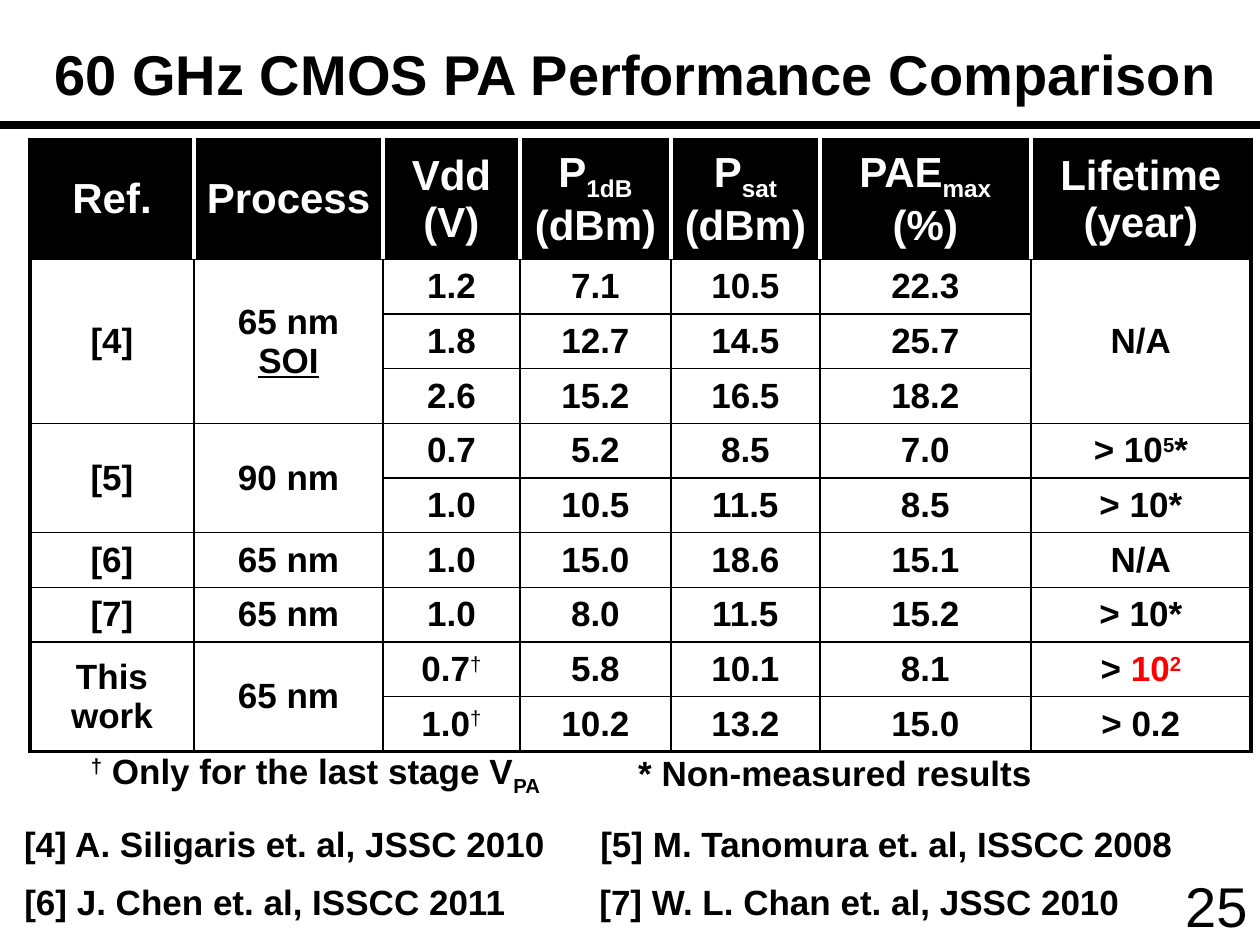
from lxml import etree
from pptx import Presentation
from pptx.dml.color import RGBColor
from pptx.enum.shapes import MSO_CONNECTOR
from pptx.enum.text import MSO_ANCHOR, MSO_AUTO_SIZE, PP_ALIGN
from pptx.oxml.ns import qn
from pptx.util import Pt

PX = 914400 / 126
LINE = MSO_CONNECTOR.STRAIGHT
MID, BOTTOM = MSO_ANCHOR.MIDDLE, MSO_ANCHOR.BOTTOM
LEFT, CENTER, RIGHT = PP_ALIGN.LEFT, PP_ALIGN.CENTER, PP_ALIGN.RIGHT
GROW = MSO_AUTO_SIZE.SHAPE_TO_FIT_TEXT

COLORS = {"ink": "000000", "paper": "FFFFFF", "mark": "FF0000"}
FONT = "Arial"
THIN, THICK = 1, 2.25

# A text is a string, or a list of paragraphs; a paragraph is a string,
# or a list of runs; a run is a string, or a string with its style.
SUB, SUP = {"base": -25}, {"base": 30}
DAGGER = ("†", {"base": 30, "bold": False})
RED, RED_SUP = {"color": "mark"}, {"color": "mark", "base": 30}

TITLE = "60 GHz CMOS PA Performance Comparison"
HEAD = ["Ref.", "Process", ["Vdd", "(V)"],
        [["P", ("1dB", SUB)], "(dBm)"], [["P", ("sat", SUB)], "(dBm)"],
        [["PAE", ("max", SUB)], "(%)"], ["Lifetime", "(year)"]]
SOI = [["65 nm ", ("SOI", {"under": True})]]
ROWS = [  # None continues the cell above
    ["[4]", SOI, "1.2", "7.1", "10.5", "22.3", "N/A"],
    [None, None, "1.8", "12.7", "14.5", "25.7", None],
    [None, None, "2.6", "15.2", "16.5", "18.2", None],
    ["[5]", "90 nm", "0.7", "5.2", "8.5", "7.0", [["> 10", ("5", SUP), "*"]]],
    [None, None, "1.0", "10.5", "11.5", "8.5", "> 10*"],
    ["[6]", "65 nm", "1.0", "15.0", "18.6", "15.1", "N/A"],
    ["[7]", "65 nm", "1.0", "8.0", "11.5", "15.2", "> 10*"],
    ["This work", "65 nm", [["0.7", DAGGER]], "5.8", "10.1", "8.1",
     [["> ", ("10", RED), ("2", RED_SUP)]]],
    [None, None, [["1.0", DAGGER]], "10.2", "13.2", "15.0", "> 0.2"],
]
COLS = [164, 189, 137, 151, 149, 211, 220]
TABLE_X, TABLE_Y, HEAD_H, BODY_H = 30, 139, 113, 492

NOTES = [  # left, top, width, text
    (66, 743, 499, [["†" and ("†", SUP), " Only for the last stage V", ("PA", SUB)]]),
    (624, 745, 422, "* Non-measured results"),
    (10, 816, 549, "[4] A. Siligaris et. al, JSSC 2010"),
    (586, 816, 601, "[5] M. Tanomura et. al, ISSCC 2008"),
    (10, 874, 510, "[6] J. Chen et. al, ISSCC 2011"),
    (586, 874, 547, "[7] W. L. Chan et. al, JSSC 2010"),
]
NOTES[0] = (66, 743, 499, [[("†", SUP), " Only for the last stage V", ("PA", SUB)]])


def px(n):
    return round(n * PX)


def rgb(name):
    return RGBColor.from_string(COLORS[name])


def write(frame, text, size, align=CENTER, color="ink", bold=True):
    for i, para in enumerate([text] if isinstance(text, str) else text):
        p = frame.paragraphs[0] if i == 0 else frame.add_paragraph()
        p.alignment = align
        for item in [para] if isinstance(para, str) else para:
            words, style = (item, {}) if isinstance(item, str) else item
            run = p.add_run()
            run.text = words
            font = run.font
            font.name, font.size = FONT, Pt(size)
            font.bold = style.get("bold", bold)
            font.color.rgb = rgb(style.get("color", color))
            if "under" in style:
                font.underline = True
            if "base" in style:
                font._element.set("baseline", str(style["base"] * 1000))


def add_note(slide, x, y, w, h, text, size=20, **look):
    frame = slide.shapes.add_textbox(px(x), px(y), px(w), px(h)).text_frame
    frame.word_wrap = False
    frame.auto_size = GROW
    write(frame, text, size, **look)
    return frame


def set_edge(cell, side, color, width):
    props = cell._tc.get_or_add_tcPr()
    edge = etree.SubElement(props, qn("a:ln" + side), w=str(Pt(width)))
    fill = etree.SubElement(edge, qn("a:solidFill"))
    etree.SubElement(fill, qn("a:srgbClr"), val=COLORS[color])


def add_grid(slide):
    cells = [HEAD] + ROWS
    last, end = len(cells) - 1, len(COLS) - 1
    grid = slide.shapes.add_table(
        len(cells), len(COLS), px(TABLE_X), px(TABLE_Y),
        px(sum(COLS)), px(HEAD_H + BODY_H)).table
    grid.first_row = grid.horz_banding = False
    for col, w in zip(grid.columns, COLS):
        col.width = px(w)
    for r, row in enumerate(grid.rows):
        row.height = px(BODY_H / len(ROWS) if r else HEAD_H)

    for r, row in enumerate(cells):
        for c, text in enumerate(row):
            cell = grid.cell(r, c)
            low = r
            while text and low < last and cells[low + 1][c] is None:
                low += 1
            if low > r:
                cell.merge(grid.cell(low, c))
            inner = ("ink", THIN) if r else ("paper", THICK)
            set_edge(cell, "L", *(inner if c else ("ink", THICK)))
            set_edge(cell, "R", *(inner if c < end else ("ink", THICK)))
            set_edge(cell, "T", "ink", THIN)
            set_edge(cell, "B", "ink", THICK if low == last else THIN)
            cell.vertical_anchor = MID
            if r:
                cell.fill.background()
            else:
                cell.fill.solid()
                cell.fill.fore_color.rgb = rgb("ink")
            if text:
                write(cell.text_frame, text, 20 if r else 24,
                      color="ink" if r else "paper")


def main():
    deck = Presentation()
    deck.slide_width, deck.slide_height = px(1260), px(945)
    slide = deck.slides.add_slide(deck.slide_layouts[5])

    title = slide.shapes.title
    title.left, title.top, title.width, title.height = map(px, (42, 33, 1218, 83))
    frame = title.text_frame
    frame.vertical_anchor = BOTTOM
    frame.margin_bottom = px(9)
    frame.word_wrap = False
    frame.auto_size = GROW
    write(frame, TITLE, 32, align=LEFT)

    rule = slide.shapes.add_connector(LINE, 0, px(125), px(1260), px(125))
    rule.line.color.rgb = rgb("ink")
    rule.line.width = Pt(4.5)
    etree.SubElement(rule._element.spPr, qn("a:effectLst"))

    add_grid(slide)
    for x, y, w, text in NOTES:
        add_note(slide, x, y, w, 55, text)
    number = add_note(slide, 1167, 866, 93, 79, "25", 32, align=RIGHT, bold=False)
    number.vertical_anchor = MID
    deck.save("out.pptx")


if __name__ == "__main__":
    main()
